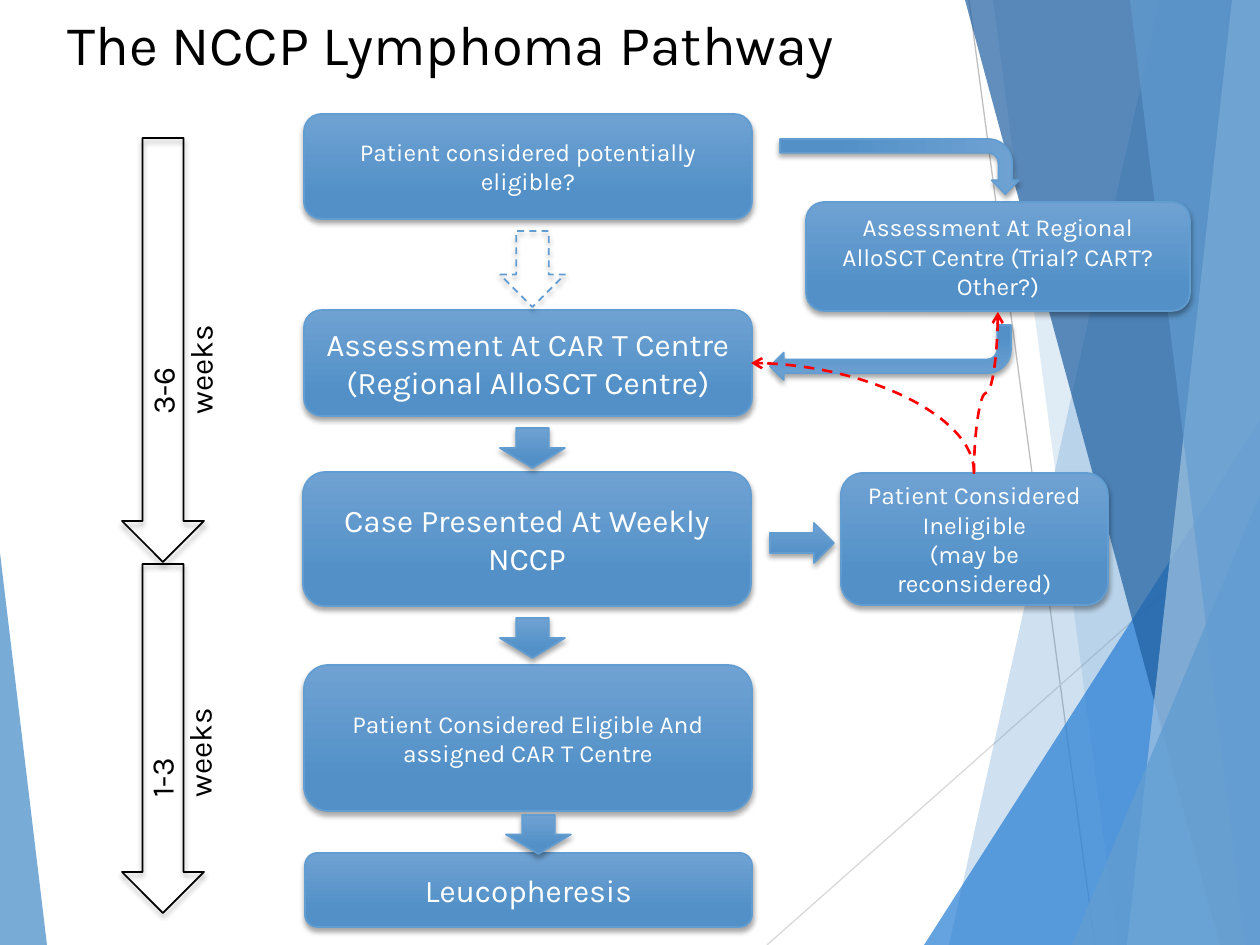
"""Build the lymphoma pathway slide: a flow chart with a time scale."""
from lxml.etree import SubElement
from pptx import Presentation
from pptx.dml.color import RGBColor
from pptx.enum.dml import MSO_LINE
from pptx.enum.shapes import MSO_CONNECTOR, MSO_SHAPE
from pptx.enum.text import MSO_ANCHOR, PP_ALIGN
from pptx.oxml.ns import qn
from pptx.util import Pt

PX = 914400 / 126
WIDE, HIGH = 1260, 945
FONT = "Karla"
HEX = {
    "black": "000000", "white": "FFFFFF", "red": "FF0000",
    "edge": "629DD1", "top": "6FA2D3", "base": "5290C7",
    "sky": "629DD1", "blue": "297FD5", "navy": "1F5FA0", "pale": "A1C4E3",
    "grey": "BFBFBF", "mist": "D9D9D9",
}
TITLE = "The NCCP Lymphoma Pathway"
RAYS = [(969, 0, 1095, 945, "grey"), (1260, 508, 767, 945, "mist")]
VEILS = [
    ("band", (1160, 949), "sky", 30),
    ("band", (993, 1118), "sky", 20),
    ("wedge", (924, 420, 336, 525, 1), "blue", 72),
    ("band", (965, 1220), "navy", 70),
    ("band", (1232, 1127), "pale", 70),
    ("band", (1130, 1245), "sky", 65),
    ("wedge", (1072, 495, 188, 450, 1), "sky", 80),
    ("wedge", (0, 553, 47, 392, 0), "sky", 85),
]
STEPS = [
    ((304, 114, 448, 105), 14, "Patient considered potentially eligible?"),
    ((806, 202, 384, 109), 14,
     "Assessment At Regional AlloSCT Centre (Trial? CART? Other?)"),
    ((304, 310, 448, 106), 18,
     "Assessment At CAR T Centre\n(Regional AlloSCT Centre)"),
    ((303, 472, 448, 134), 18, "Case Presented At Weekly NCCP"),
    ((304, 665, 448, 146), 14,
     "Patient Considered Eligible And assigned CAR T Centre"),
    ((841, 473, 267, 132), 14,
     "Patient Considered Ineligible\n(may be reconsidered)"),
    ((305, 853, 447, 74), 18, "Leucopheresis"),
]
DOWN, BENT = MSO_SHAPE.DOWN_ARROW, MSO_SHAPE.BENT_ARROW
ARROWS = [
    (DOWN, (500, 618, 65, 40), 0),
    (BENT, (872, 47, 55, 239), 90),
    (BENT, (770, 325, 241, 55), 180),
    (DOWN, (500, 428, 65, 40), 0),
    (DOWN, (506, 815, 65, 39), 0),
    (MSO_SHAPE.RIGHT_ARROW, (770, 523, 64, 40), 0),
]
MAYBE = (500, 231, 65, 76)
CURVES = [
    ("curvedConnector2", (808, 306, 109, 223), 270, ["flipV"]),
    ("curvedConnector3", (905, 381, 162, 24), 90, ["flipH", "flipV"]),
]
SPANS = [
    ((122, 138, 82, 424), (84, 324, 156, 50), "3-6 weeks"),
    ((122, 564, 82, 349), (83, 707, 156, 50), "1-3 weeks"),
]


def emu(*nums):
    return [round(n * PX) for n in nums]


def rgb(name):
    return RGBColor.from_string(HEX[name])


def write(shape, text, size, color, align):
    frame = shape.text_frame
    frame.word_wrap = True
    frame.text = text
    for para in frame.paragraphs:
        para.alignment = align
        for run in para.runs:
            run.font.size, run.font.name = Pt(size), FONT
            run.font.color.rgb = rgb(color)


def label(shapes, box, text, size, turn=0):
    item = shapes.add_textbox(*emu(*box))
    item.rotation = turn
    item.text_frame.vertical_anchor = MSO_ANCHOR.TOP
    write(item, text, size, "black", PP_ALIGN.LEFT)


def shade(shape):
    shape.shadow.inherit = False
    glow = SubElement(
        shape.element.spPr.find(qn("a:effectLst")), qn("a:outerShdw"),
        blurRad=str(Pt(3)), dist=str(Pt(2)), dir="5400000", rotWithShape="0")
    tone = SubElement(glow, qn("a:srgbClr"), val=HEX["black"])
    SubElement(tone, qn("a:alpha"), val="35000")


def block(shapes, kind, box, edge="edge", full=True, turn=0):
    shape = shapes.add_shape(kind, *emu(*box))
    shape.rotation = turn
    if full:
        shape.fill.gradient()
        shape.fill.gradient_angle = 270
        stops = shape.fill.gradient_stops
        for stop, name, spot in zip(stops, ("top", "base"), (0, 0.78)):
            stop.color.rgb, stop.position = rgb(name), spot
    else:
        shape.fill.background()
    shape.line.color.rgb, shape.line.width = rgb(edge), Pt(1)
    shade(shape)
    return shape


def link(shapes, kind, ends, color, width):
    line = shapes.add_connector(kind, *emu(*ends))
    line.line.color.rgb, line.line.width = rgb(color), Pt(width)
    SubElement(line.element.spPr, qn("a:effectLst"))
    return line


def veil(shapes, kind, dims, color, alpha):
    if kind == "band":
        top, low = dims
        pen = shapes.build_freeform(top, 0, scale=PX)
        pen.add_line_segments([(WIDE, 0), (WIDE, HIGH), (low, HIGH)])
        shape = pen.convert_to_shape()
    else:
        *box, tip = dims
        shape = shapes.add_shape(MSO_SHAPE.ISOSCELES_TRIANGLE, *emu(*box))
        shape.adjustments[0] = tip
    shape.fill.solid()
    shape.fill.fore_color.rgb = rgb(color)
    tone = shape.element.spPr.find(qn("a:solidFill")).find(qn("a:srgbClr"))
    SubElement(tone, qn("a:alpha"), val=str(alpha * 1000))
    shape.line.fill.background()
    shape.shadow.inherit = False


def curve(shapes, kind, box, turn, flips):
    left, top, wide, high = box
    ends = (left, top, left + wide, top + high)
    item = link(shapes, MSO_CONNECTOR.CURVE, ends, "red", 1.5)
    item.line.dash_style = MSO_LINE.DASH
    props = item.element.spPr
    props.find(qn("a:prstGeom")).set("prst", kind)
    frame = props.find(qn("a:xfrm"))
    frame.set("rot", str(turn * 60000))
    for flip in flips:
        frame.set(flip, "1")
    SubElement(props.find(qn("a:ln")), qn("a:tailEnd"), type="arrow")


def main():
    deck = Presentation()
    deck.slide_width, deck.slide_height = emu(WIDE, HIGH)
    shapes = deck.slides.add_slide(deck.slide_layouts[6]).shapes
    for *ends, color in RAYS:
        link(shapes, MSO_CONNECTOR.STRAIGHT, ends, color, 0.75)
    for item in VEILS:
        veil(shapes, *item)
    label(shapes, (55, 3, 1134, 121), TITLE, 32)
    for box, size, text in STEPS:
        step = block(shapes, MSO_SHAPE.ROUNDED_RECTANGLE, box)
        write(step, text, size, "white", PP_ALIGN.CENTER)
    maybe = block(shapes, DOWN, MAYBE, full=False)
    maybe.line.dash_style = MSO_LINE.DASH
    for kind, box, turn in ARROWS:
        block(shapes, kind, box, turn=turn)
    for item in CURVES:
        curve(shapes, *item)
    for bar, box, text in SPANS:
        block(shapes, DOWN, bar, "black", full=False)
        label(shapes, box, text, 18, 270)
    deck.save("out.pptx")


if __name__ == "__main__":
    main()
